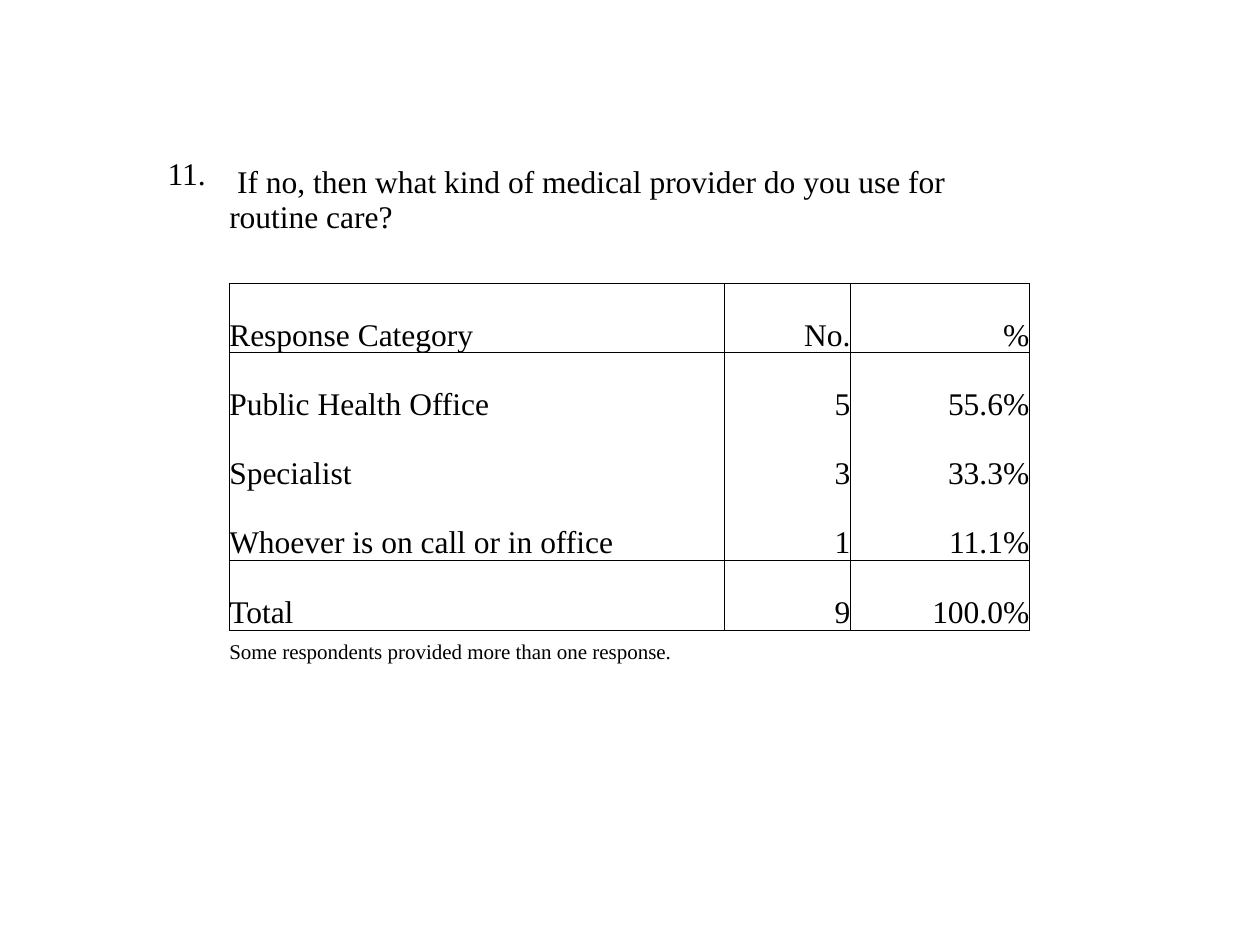
from lxml.etree import SubElement
from pptx import Presentation
from pptx.dml.color import RGBColor
from pptx.enum.text import MSO_ANCHOR as Anchor, PP_ALIGN as Align
from pptx.oxml.ns import qn
from pptx.util import Inches, Pt

COLORS = {"ink": "000000"}
FONT = "Times New Roman"
TEXT_SIZE, NOTE_SIZE = 18, 12

ROWS = [
    ("11.", " If no, then what kind of medical provider do you use for routine care?", "", ""),
    ("", "", "", ""),
    ("", "Response Category", "No.", "%"),
    ("", "Public Health Office", "5", "55.6%"),
    ("", "Specialist", "3", "33.3%"),
    ("", "Whoever is on call or in office", "1", "11.1%"),
    ("", "Total", "9", "100.0%"),
    ("", "Some respondents provided more than one response.", "", ""),
]
COL_WIDTHS = [0.49, 3.93, 1, 1.42]
ROW_HEIGHTS = [0.62, 0.38] + [0.55] * 5 + [0.27]
LEFT, TOP = 1.33, 1.25
HEADER, TOTAL, NOTE = 2, 6, 7
RULES_ABOVE = {HEADER, HEADER + 1, TOTAL, NOTE}


def set_borders(cell, row, col):
    """Rule the response grid; every other edge stays clear."""
    in_grid = HEADER <= row <= TOTAL
    edges = {
        "L": in_grid and col >= 1,
        "R": in_grid,
        "T": col >= 1 and row in RULES_ABOVE,
        "B": col >= 1 and row + 1 in RULES_ABOVE,
    }
    props = cell._tc.get_or_add_tcPr()
    for side, ruled in edges.items():
        line = SubElement(props, qn(f"a:ln{side}"), w=str(Pt(0.5)))
        if ruled:
            fill = SubElement(line, qn("a:solidFill"))
            SubElement(fill, qn("a:srgbClr"), val=COLORS["ink"])
        else:
            SubElement(line, qn("a:noFill"))


def set_text(cell, text, row, col):
    cell.margin_left = cell.margin_right = cell.margin_top = cell.margin_bottom = 0
    cell.vertical_anchor = Anchor.TOP if col == 0 else Anchor.BOTTOM
    size = Pt(NOTE_SIZE if row == NOTE or not text else TEXT_SIZE)
    p = cell.text_frame.paragraphs[0]
    p.alignment = Align.RIGHT if col >= 2 else Align.LEFT
    if not text:
        SubElement(p._p, qn("a:endParaRPr"), sz=str(int(size.pt * 100)))
        return
    r = p.add_run()
    r.text = text
    r.font.name, r.font.size = FONT, size
    r.font.bold = False
    r.font.color.rgb = RGBColor.from_string(COLORS["ink"])


prs = Presentation()
prs.slide_width, prs.slide_height = Inches(10), Inches(7.5)
s = prs.slides.add_slide(prs.slide_layouts[6])

table = s.shapes.add_table(
    len(ROWS), len(COL_WIDTHS), Inches(LEFT), Inches(TOP),
    Inches(sum(COL_WIDTHS)), Inches(sum(ROW_HEIGHTS)),
).table
table.first_row = table.horz_banding = False
for column, width in zip(table.columns, COL_WIDTHS):
    column.width = Inches(width)
for table_row, height in zip(table.rows, ROW_HEIGHTS):
    table_row.height = Inches(height)

for row, texts in enumerate(ROWS):
    for col, text in enumerate(texts):
        cell = table.cell(row, col)
        set_borders(cell, row, col)
        cell.fill.background()
        set_text(cell, text, row, col)
table.cell(0, 1).merge(table.cell(0, 3))

prs.save("out.pptx")
